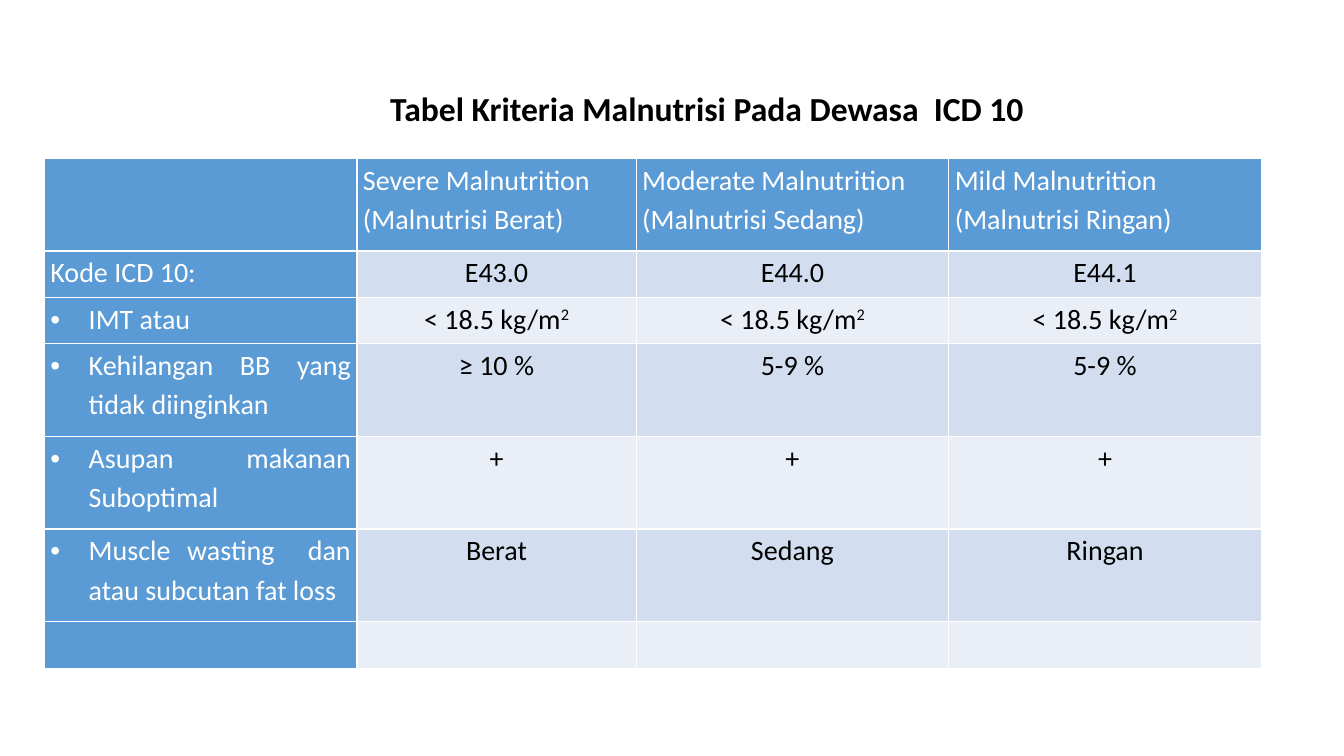
from dataclasses import dataclass
from lxml.etree import SubElement as Sub
from pptx import Presentation
from pptx.dml.color import RGBColor as RGB
from pptx.enum.text import MSO_ANCHOR as Anchor, MSO_AUTO_SIZE as Fit, PP_ALIGN as Align
from pptx.oxml.ns import qn
from pptx.util import Inches, Pt


@dataclass
class Theme:
    font: str = "Calibri"
    title: int = 24
    body: int = 20
    black: str = "000000"
    white: str = "FFFFFF"
    blue: str = "5B9BD5"
    bands: tuple = ("D2DEEF", "EAEFF7")


theme = Theme()


def style(para, size, color, bold, align):
    para.alignment = align
    para.line_spacing = 1.15
    for run in para.runs:
        font = run.font
        font.name, font.size, font.bold = theme.font, Pt(size), bold
        font.color.rgb = RGB.from_string(color)


def border(cell):
    props = cell._tc.get_or_add_tcPr()
    for side in ("a:lnL", "a:lnR", "a:lnT", "a:lnB"):
        line = Sub(props, qn(side), w=str(Pt(1)))
        fill = Sub(line, qn("a:solidFill"))
        Sub(fill, qn("a:srgbClr"), val=theme.white)


deck = Presentation()
deck.slide_width, deck.slide_height = Inches(13.33), Inches(7.5)
slide = deck.slides.add_slide(deck.slide_layouts[5])

title = slide.shapes.title
title.left, title.top = Inches(3.77), Inches(0.76)
title.width, title.height = Inches(6.55), Inches(0.57)
frame = title.text_frame
frame.text = "Tabel Kriteria Malnutrisi Pada Dewasa  ICD 10"
frame.word_wrap = False
frame.auto_size = Fit.SHAPE_TO_FIT_TEXT
frame.vertical_anchor = Anchor.TOP
style(frame.paragraphs[0], theme.title, theme.black, True, Align.JUSTIFY)

mass = "< 18.5 kg/m²"
rows = [
    ("", "Severe Malnutrition\n(Malnutrisi Berat)",
     "Moderate Malnutrition\n(Malnutrisi Sedang)",
     "Mild Malnutrition\n(Malnutrisi Ringan)"),
    ("Kode ICD 10:", "E43.0", "E44.0", "E44.1"),
    ("IMT atau", mass, mass, mass),
    ("Kehilangan BB yang tidak diinginkan", "≥ 10 %", "5-9 %", "5-9 %"),
    ("Asupan makanan Suboptimal", "+", "+", "+"),
    ("Muscle wasting  dan atau subcutan fat loss", "Berat", "Sedang", "Ringan"),
    ("", "", "", ""),
]
widths = [3.1, 2.77, 3.1, 3.1]
heights = [0.92, 0.46, 0.46, 0.92, 0.92, 0.92, 0.46]
table = slide.shapes.add_table(
    len(rows), len(widths), Inches(0.44), Inches(1.57),
    Inches(sum(widths)), Inches(sum(heights))).table
for col, width in zip(table.columns, widths):
    col.width = Inches(width)
for row, height in zip(table.rows, heights):
    row.height = Inches(height)

for r, row in enumerate(rows):
    for c, text in enumerate(row):
        cell = table.cell(r, c)
        head = r == 0 or c == 0
        border(cell)
        cell.fill.solid()
        cell.fill.fore_color.rgb = RGB.from_string(
            theme.blue if head else theme.bands[(r - 1) % 2])
        cell.margin_left = cell.margin_right = Inches(0.06)
        cell.margin_top = cell.margin_bottom = 0
        cell.text_frame.text = text.removesuffix("²")
        for para in cell.text_frame.paragraphs:
            power = None
            if text.endswith("²"):
                power = para.add_run()
                power.text = "2"
            style(para, theme.body, theme.white if head else theme.black,
                  False, Align.JUSTIFY if head else Align.CENTER)
            if power:
                power.font._element.set("baseline", "30000")
            if c == 0 and r > 1 and text:
                props = para._p.get_or_add_pPr()
                props.set("marL", str(Inches(0.38)))
                props.set("indent", str(-Inches(0.38)))
                Sub(props, qn("a:buFont"), typeface="Arial")
                Sub(props, qn("a:buChar"), char="•")

deck.save("out.pptx")
